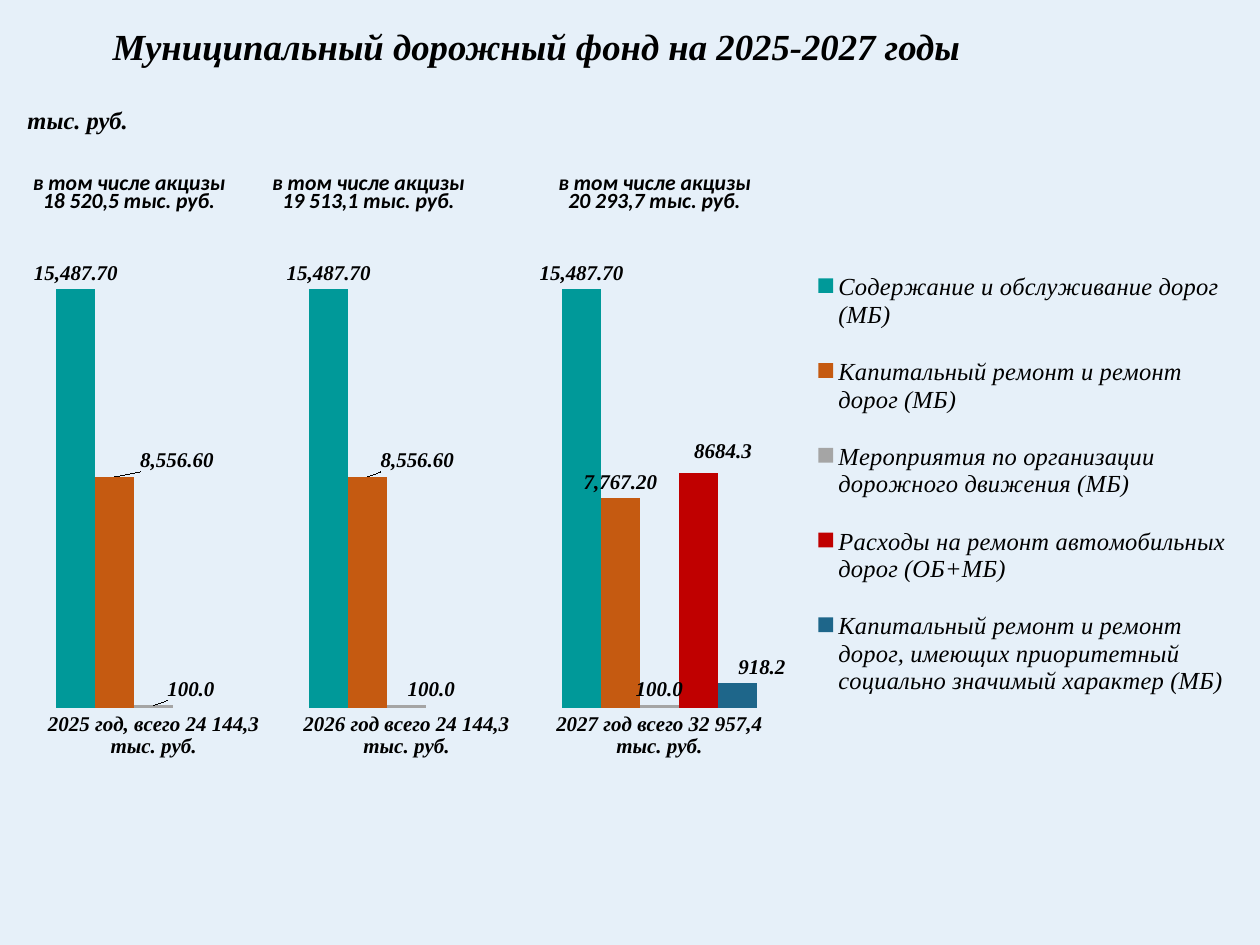
import dataclasses

import lxml.etree
import pptx
import pptx.chart.data
import pptx.dml.color
import pptx.enum.chart
import pptx.enum.text
import pptx.oxml.ns
import pptx.util

Pt = pptx.util.Pt
qn = pptx.oxml.ns.qn


@dataclasses.dataclass(frozen=True)
class Theme:
    background: str = "E6F0F9"
    ink: str = "000000"
    serif: str = "Times New Roman"
    sans: str = "Calibri"
    title: float = 21
    body: float = 14
    note: float = 12.4
    label: float = 12
    series: tuple = ("009999", "C55A11", "A5A5A5", "C00000", "1E668A")


def color(code):
    return pptx.dml.color.RGBColor.from_string(code)


def style_font(font, name, size, ink, bold=True):
    font.name = name
    font.size = Pt(size)
    font.bold = bold
    font.italic = True
    font.color.rgb = color(ink)


def write_text(frame, text, font, size, ink, align=None, line=None):
    para = frame.paragraphs[0]
    para.alignment = align
    para.line_spacing = line
    span = para.add_run()
    span.text = text
    style_font(span.font, font, size, ink)


def make_layout(target=None, **values):
    layout = lxml.etree.Element(qn("c:layout"))
    manual = lxml.etree.SubElement(layout, qn("c:manualLayout"))
    if target:
        lxml.etree.SubElement(manual, qn("c:layoutTarget")).set("val", target)
        for mode in ("xMode", "yMode"):
            lxml.etree.SubElement(manual, qn("c:" + mode)).set("val", "edge")
    for key, value in values.items():
        lxml.etree.SubElement(manual, qn("c:" + key)).set("val", str(value))
    return layout


def replace_layout(parent, layout, index):
    for old in parent.findall(qn("c:layout")):
        parent.remove(old)
    parent.insert(index, layout)


class SlideBuilder:
    def __init__(self, page, theme):
        self.page = page
        self.theme = theme
        page.background.fill.solid()
        page.background.fill.fore_color.rgb = color(theme.background)

    def text(self, text, left, top, width, height, **style):
        box = self.page.shapes.add_textbox(Pt(left), Pt(top), Pt(width), Pt(height))
        box.text_frame.word_wrap = True
        write_text(box.text_frame, text, ink=self.theme.ink, **style)

    def column_chart(self, categories, rows, left, top, width, height):
        data = pptx.chart.data.CategoryChartData()
        data.categories = categories
        for name, values, number_format, shifts in rows:
            data.add_series(name, values, number_format)
        chart = self.page.shapes.add_chart(
            pptx.enum.chart.XL_CHART_TYPE.COLUMN_CLUSTERED,
            Pt(left), Pt(top), Pt(width), Pt(height), data).chart
        chart.has_title = False
        chart.font.name = self.theme.sans
        chart.font.size = Pt(10)
        chart.font.color.rgb = color(self.theme.ink)
        self.axes(chart)
        self.legend(chart)
        plot = chart.plots[0]
        plot.gap_width = 150
        plot.overlap = 0
        plot.vary_by_categories = False
        for series, row, fill in zip(plot.series, rows, self.theme.series):
            series.format.fill.solid()
            series.format.fill.fore_color.rgb = color(fill)
            series.invert_if_negative = False
            self.labels(series, row[2], row[3])
        replace_layout(chart._chartSpace.chart.plotArea,
                       make_layout("inner", x=0.02, y=0.02, w=0.61, h=0.87), 0)

    def axes(self, chart):
        axis = chart.category_axis
        axis.major_tick_mark = pptx.enum.chart.XL_TICK_MARK.NONE
        axis.format.line.fill.background()
        style_font(axis.tick_labels.font, self.theme.serif, self.theme.label, self.theme.ink)
        values = chart.value_axis
        values.minimum_scale = 0
        values.maximum_scale = 18000
        values.has_major_gridlines = False
        values.visible = False

    def legend(self, chart):
        chart.has_legend = True
        legend = chart.legend
        legend.position = pptx.enum.chart.XL_LEGEND_POSITION.RIGHT
        legend.include_in_layout = False
        style_font(legend.font, self.theme.serif, self.theme.body, self.theme.ink, bold=False)
        layout = make_layout(x=0.65, y=0.06, w=0.34, h=0.86)
        for mode in ("yMode", "xMode"):
            element = lxml.etree.Element(qn("c:" + mode))
            element.set("val", "edge")
            layout[0].insert(0, element)
        replace_layout(legend._element, layout, 1)

    def labels(self, series, number_format, shifts):
        outside = pptx.enum.chart.XL_LABEL_POSITION.OUTSIDE_END
        labels = series.data_labels
        labels.show_value = True
        labels.number_format = number_format
        labels.number_format_is_linked = False
        labels.position = outside
        style_font(labels.font, self.theme.serif, self.theme.label, self.theme.ink)
        for index, (x, y) in shifts.items():
            label = series.points[index].data_label
            style_font(label.font, self.theme.serif, self.theme.label, self.theme.ink)
            label.position = outside
            element = labels._element.xpath(f"c:dLbl[c:idx/@val='{index}']")[0]
            replace_layout(element, make_layout(x=x, y=y), 1)
            number = lxml.etree.Element(qn("c:numFmt"))
            number.set("formatCode", number_format)
            number.set("sourceLinked", "0")
            element.insert(2, number)


def main():
    theme = Theme()
    deck = pptx.Presentation()
    deck.slide_width, deck.slide_height = Pt(720), Pt(540)
    builder = SlideBuilder(deck.slides.add_slide(deck.slide_layouts[6]), theme)
    center = pptx.enum.text.PP_ALIGN.CENTER

    builder.text("Муниципальный дорожный фонд на 2025-2027 годы", 6, 10, 601, 58,
                 font=theme.serif, size=theme.title, align=center)
    builder.text("тыс. руб.", 8.6, 56.2, 79, 24.5, font=theme.serif, size=theme.body)
    builder.column_chart(
        ["2025 год, всего 24 144,3 тыс. руб.",
         "2026 год всего 24 144,3 тыс. руб.",
         "2027 год всего 32 957,4 тыс. руб."],
        [("Содержание и обслуживание дорог (МБ)",
          (15487.7, 15487.7, 15487.7), "#,##0.00", {}),
         ("Капитальный ремонт и ремонт дорог (МБ)",
          (8556.6, 8556.6, 7767.2), "#,##0.00", {0: (0.05, 0), 1: (0.04, 0)}),
         ("Мероприятия по организации дорожного движения (МБ)",
          (100, 100, 100), "#,##0.0", {0: (0.03, 0), 1: (0.02, 0)}),
         ("Расходы на ремонт автомобильных дорог (ОБ+МБ)",
          (None, None, 8684.3), "General", {2: (0.02, -0.01)}),
         ("Капитальный ремонт и ремонт дорог, имеющих приоритетный "
          "социально значимый характер (МБ)",
          (None, None, 918.2), "General", {2: (0.02, 0)})],
        1.4, 120.2, 710.6, 319.7)
    for left, amount in ((8.6, "18 520,5"), (145.4, "19 513,1"), (308.9, "20 293,7")):
        builder.text(f"в том числе акцизы {amount} тыс. руб.", left, 97.2, 130.3, 33.8,
                     font=theme.sans, size=theme.note, align=center, line=0.7)
    deck.save("out.pptx")


if __name__ == "__main__":
    main()
